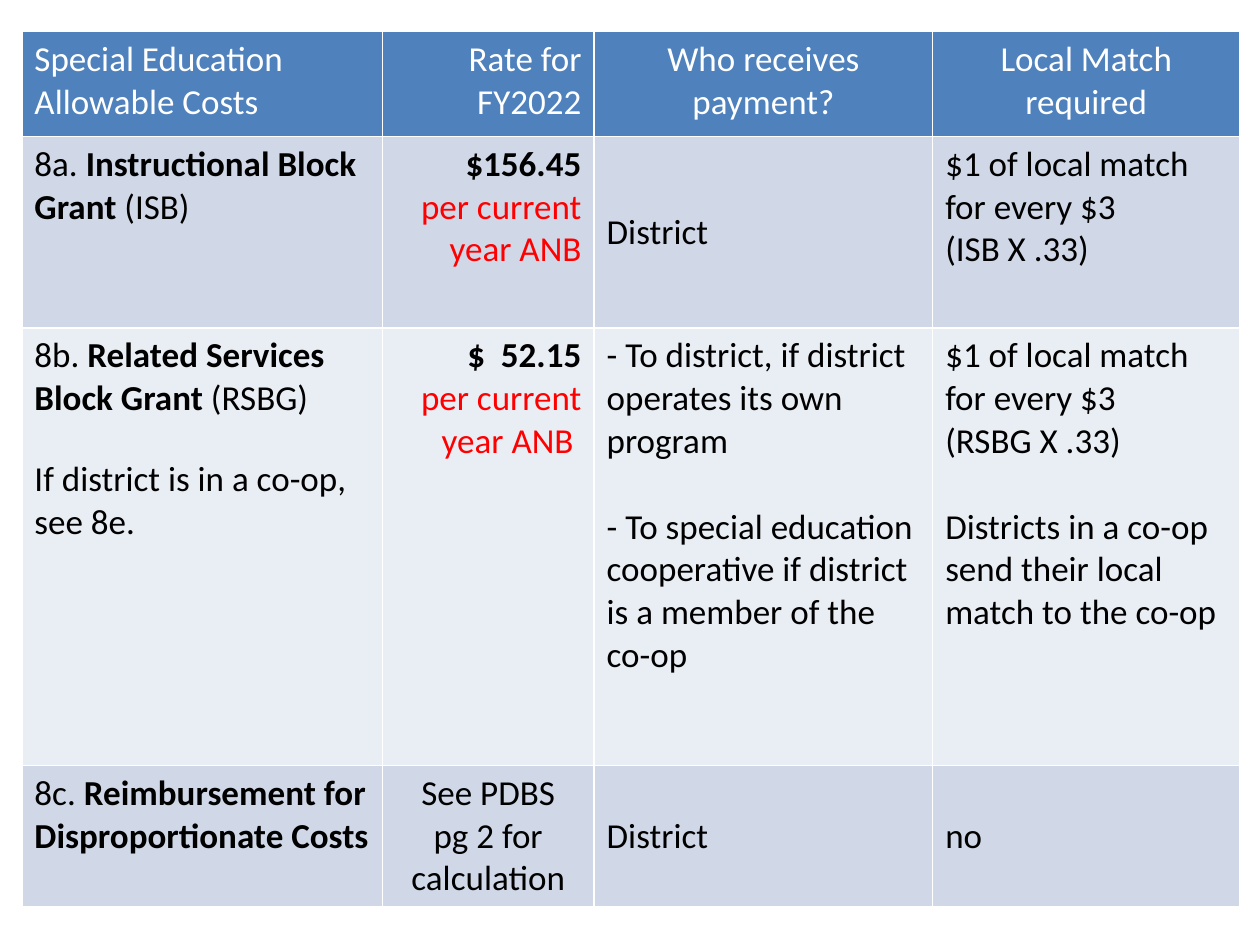
from dataclasses import dataclass

from lxml.etree import SubElement
from pptx import Presentation
from pptx.dml.color import RGBColor
from pptx.enum.text import MSO_ANCHOR, PP_ALIGN
from pptx.oxml.ns import qn
from pptx.util import Pt


@dataclass(frozen=True)
class Theme:
    font: str = "Calibri"
    size: int = 20
    border_width: int = 1
    header: str = "4F81BD"
    bands: tuple = ("D0D8E8", "E9EDF4")
    light: str = "FFFFFF"
    dark: str = "000000"
    accent: str = "FF0000"


@dataclass(frozen=True)
class Para:
    text: str
    gap: float = 0
    accent: bool = False


@dataclass(frozen=True)
class Entry:
    paras: tuple
    align: PP_ALIGN = PP_ALIGN.LEFT
    anchor: MSO_ANCHOR = MSO_ANCHOR.TOP


THEME = Theme()
LEFT, CENTER, RIGHT = PP_ALIGN.LEFT, PP_ALIGN.CENTER, PP_ALIGN.RIGHT
MIDDLE = MSO_ANCHOR.MIDDLE
COLUMN_WIDTHS = (206, 121, 193.5, 175.5)
ROW_HEIGHTS = (60, 109.5, 250, 80)


def rate(amount, basis):
    return Entry((Para(f"*{amount}*"), Para(basis, accent=True)), RIGHT)


def match(formula, *more):
    return Entry((Para("$1 of local match for every $3"), Para(formula), *more))


def middle(text, align=LEFT):
    return Entry((Para(text),), align, MIDDLE)


ROWS = (
    (
        Entry((Para("Special Education Allowable Costs"),)),
        Entry((Para("Rate for FY2022"),), RIGHT),
        Entry((Para("Who receives payment?"),), CENTER),
        Entry((Para("Local Match required"),), CENTER),
    ),
    (
        Entry((Para("8a. *Instructional Block Grant *(ISB)"),)),
        rate("$156.45", "per current year ANB"),
        middle("District"),
        match("(ISB X .33)"),
    ),
    (
        Entry((
            Para("8b. *Related Services Block Grant *(RSBG)"),
            Para("If district is in a co-op, see 8e.", gap=22),
        )),
        rate("$  52.15", "per current year ANB "),
        Entry((
            Para("- To district, if district operates its own program"),
            Para("- To special education cooperative if district "
                 "is a member of the co-op", gap=24.4),
        )),
        match(
            "(RSBG X .33)",
            Para("Districts in a co-op send their local match to the co-op", gap=24.4),
        ),
    ),
    (
        Entry((Para("8c. *Reimbursement for Disproportionate Costs*"),)),
        Entry((Para("See PDBS"), Para("pg 2 for calculation")), CENTER, MIDDLE),
        middle("District"),
        middle("no"),
    ),
)


def add_borders(cell):
    props = cell._tc.get_or_add_tcPr()
    for side in ("a:lnL", "a:lnR", "a:lnT", "a:lnB"):
        line = SubElement(props, qn(side), w=str(Pt(THEME.border_width)))
        fill = SubElement(line, qn("a:solidFill"))
        SubElement(fill, qn("a:srgbClr"), val=THEME.light)


def write_para(p, para, align, color):
    p.alignment = align
    p.space_before = Pt(para.gap)
    p.font.name = THEME.font
    p.font.size = Pt(THEME.size)
    p.font.color.rgb = RGBColor.from_string(THEME.accent if para.accent else color)
    for i, part in enumerate(para.text.split("*")):
        if part:
            r = p.add_run()
            r.text = part
            r.font.bold = i % 2 == 1


def fill_cell(cell, entry, fill, color):
    add_borders(cell)
    cell.fill.solid()
    cell.fill.fore_color.rgb = RGBColor.from_string(fill)
    cell.vertical_anchor = entry.anchor
    tf = cell.text_frame
    for i, para in enumerate(entry.paras):
        p = tf.add_paragraph() if i else tf.paragraphs[0]
        write_para(p, para, entry.align, color)


def add_cost_table(s, left, top, width, height):
    table = s.shapes.add_table(
        len(ROWS), len(COLUMN_WIDTHS), Pt(left), Pt(top), Pt(width), Pt(height)
    ).table
    table.first_row = False
    table.horz_banding = False
    for column, share in zip(table.columns, COLUMN_WIDTHS):
        column.width = Pt(width * share / sum(COLUMN_WIDTHS))
    for row, share in zip(table.rows, ROW_HEIGHTS):
        row.height = Pt(height * share / sum(ROW_HEIGHTS))
    for i, entries in enumerate(ROWS):
        fill = THEME.bands[(i - 1) % 2] if i else THEME.header
        color = THEME.dark if i else THEME.light
        for j, entry in enumerate(entries):
            fill_cell(table.cell(i, j), entry, fill, color)


def main():
    prs = Presentation()
    prs.slide_width, prs.slide_height = Pt(720), Pt(540)
    s = prs.slides.add_slide(prs.slide_layouts[6])
    add_cost_table(s, 12.5, 18, sum(COLUMN_WIDTHS), sum(ROW_HEIGHTS))
    prs.save("out.pptx")


if __name__ == "__main__":
    main()
